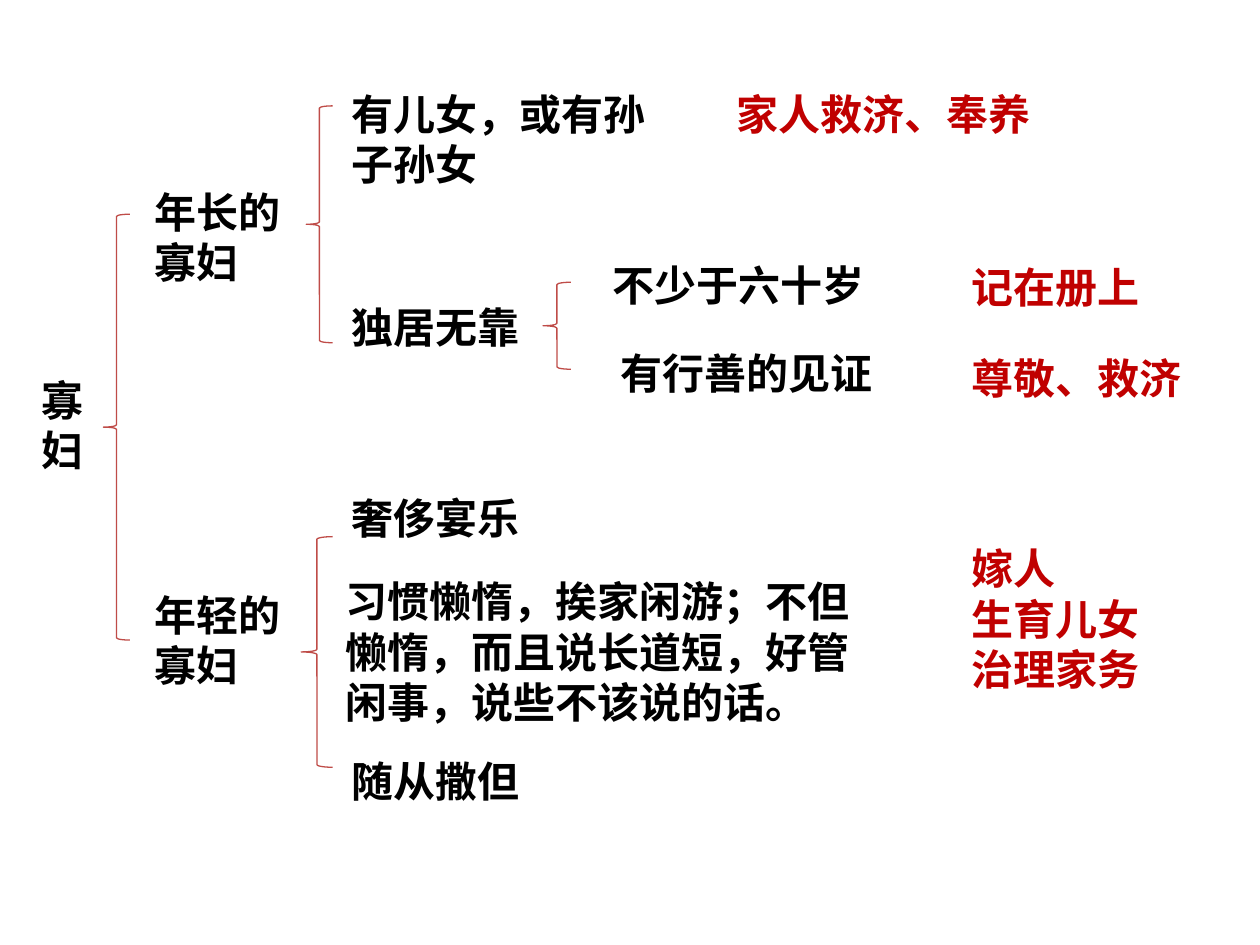
import dataclasses

import pptx
import pptx.util
import pptx.dml.color
import pptx.enum.shapes
import pptx.enum.text

COLS, ROWS = 100, 75


@dataclasses.dataclass(frozen=True)
class Theme:
    font: str = "Calibri"
    size: float = 24
    line: float = 0.75
    ink: str = "000000"
    duty: str = "C00000"
    brace: str = "BF4C48"


THEME = Theme()
CELL = pptx.util.Inches(0.1)
ROOT, GROUP, TRAIT, DUTY = 2.3, 11.3, 26.9, 76.1

TOPICS = [
    ("寡妇", ROOT, 29.2, 7.9, 9.1),
    ("年长的寡妇", GROUP, 14.3, 13.1, 9.1),
    ("年轻的寡妇", GROUP, 46.3, 13.1, 9.1),
    ("有儿女，或有孙子孙女", TRAIT, 6.5, 27.8, 9.1),
    ("独居无靠", TRAIT, 23.4, 20.7, 5),
    ("不少于六十岁", 47.6, 20.1, 23.9, 5),
    ("有行善的见证", 48.3, 27.1, 23.9, 5),
    ("奢侈宴乐", TRAIT, 38.6, 27.8, 5),
    ("习惯懒惰，挨家闲游；不但懒惰，而且说长道短，好管闲事，说些不该说的话。",
     26.4, 45.2, 43.2, 13.1),
    ("随从撒但", TRAIT, 59.5, 15.4, 5),
]

DUTIES = [
    ("家人救济、奉养", 57.5, 6.5, 36.9, 5),
    ("记在册上", DUTY, 20.3, 18.3, 5),
    ("尊敬、救济", DUTY, 27.5, 20.8, 5),
    ("嫁人\n生育儿女\n治理家务", DUTY, 42.6, 17.5, 13.1),
]

BRACES = [
    (8.2, 17, 2.1, 33.8),
    (24.3, 8.4, 2.1, 18.8),
    (43.1, 22.4, 2.2, 6.9),
    (23.9, 42.6, 2.5, 18.3),
]


def apply(item, values):
    for name, value in values.items():
        setattr(item, name, value)


def place(*cells):
    return [round(cell * CELL) for cell in cells]


def paint(code):
    return pptx.dml.color.RGBColor.from_string(code)


def add_text(slide, text, area, color):
    frame = slide.shapes.add_textbox(*place(*area)).text_frame
    apply(frame, {
        "text": text,
        "word_wrap": True,
        "auto_size": pptx.enum.text.MSO_AUTO_SIZE.SHAPE_TO_FIT_TEXT,
    })
    for para in frame.paragraphs:
        for run in para.runs:
            apply(run.font, {
                "name": THEME.font,
                "size": pptx.util.Pt(THEME.size),
                "bold": True,
            })
            run.font.color.rgb = paint(color)


def add_brace(slide, area):
    kind = pptx.enum.shapes.MSO_SHAPE.LEFT_BRACE
    brace = slide.shapes.add_shape(kind, *place(*area))
    brace.shadow.inherit = False
    brace.fill.background()
    brace.line.color.rgb = paint(THEME.brace)
    brace.line.width = pptx.util.Pt(THEME.line)


def main():
    deck = pptx.Presentation()
    apply(deck, {"slide_width": COLS * CELL, "slide_height": ROWS * CELL})
    slide = deck.slides.add_slide(deck.slide_layouts[6])
    for items, color in ((TOPICS, THEME.ink), (DUTIES, THEME.duty)):
        for text, *area in items:
            add_text(slide, text, area, color)
    for area in BRACES:
        add_brace(slide, area)
    deck.save("out.pptx")


if __name__ == "__main__":
    main()
